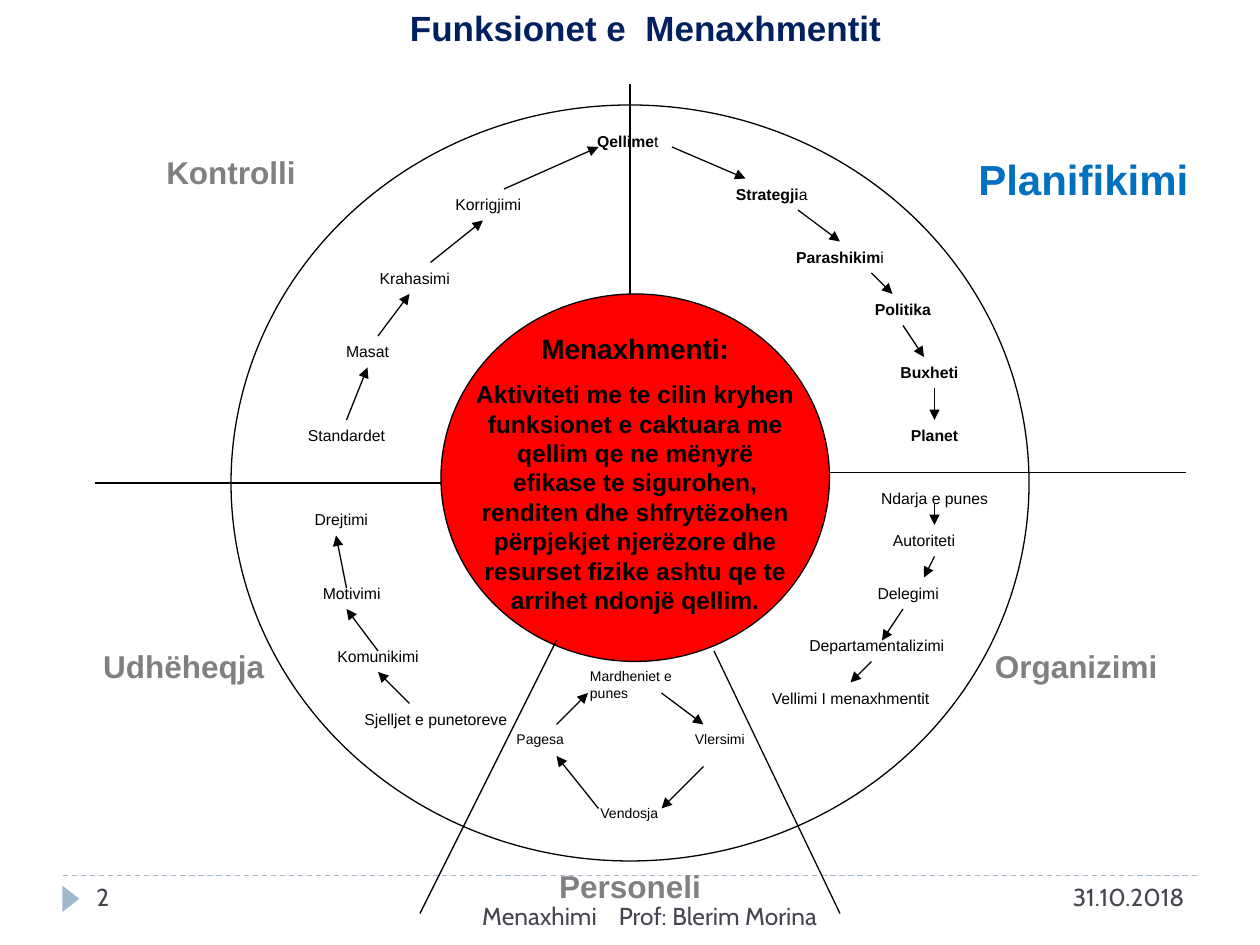
from dataclasses import dataclass

from lxml import etree
from pptx import Presentation
from pptx import util as u
from pptx.dml.color import RGBColor
from pptx.enum import dml, shapes, text
from pptx.oxml.ns import qn

LEFT, CENTER, RIGHT = text.PP_ALIGN.LEFT, text.PP_ALIGN.CENTER, text.PP_ALIGN.RIGHT


@dataclass(frozen=True)
class Style:
    size: float
    color: str = "000000"
    bold: bool = False
    align: int = CENTER
    height: float = 3
    font: str = "Arial"


class Theme:
    ink = "000000"
    paper = "FFFFFF"
    core = "FF0000"
    accent = "9FB8CD"
    stroke = 0.75
    title = Style(20, "002060", True, height=5.2)
    active = Style(24, "0070C0", True, LEFT, 6)
    sector = Style(18, "808080", True, height=4.8)
    step = Style(9)
    key_step = Style(9, bold=True)
    staff = Style(8, align=LEFT, height=2.8)
    heading = Style(16, bold=True, height=35.8)
    definition = Style(14, bold=True)
    footer = Style(14, "464653", align=RIGHT, height=4.8, font="Cabin")
    number = Style(14, "464653", align=LEFT, height=4.8, font="Cabin")


CYCLE_LINES = [(60, 28, 60, 8), (79, 45, 113, 45), (42, 46, 9, 46),
               (53, 61, 40, 87), (68, 62, 80, 87)]

PLANNING = [("Qellime", "t ", 54, 12, 12), ("Strategji", "a", 65, 17, 17),
            ("Parashikim", "i", 70, 23, 20), ("Politika", "", 77, 28, 18),
            ("Buxheti", "", 81, 34, 15), ("Planet", "", 81, 40, 16)]

STEPS = [("Ndarja e punes", 81, 46, 16), ("Autoriteti", 80, 50, 16),
         ("Delegimi", 78, 55, 17), ("Departamentalizimi", 75, 60, 17),
         ("Vellimi I menaxhmentit", 70, 65, 22),
         ("Sjelljet e punetoreve", 31, 67, 21), ("Komunikimi", 26, 61, 20),
         ("Motivimi", 25, 55, 17), ("Drejtimi", 25, 48, 15),
         ("Standardet", 24, 40, 18), ("Masat", 27, 32, 16),
         ("Krahasimi", 32, 25, 15), ("Korrigjimi", 38, 18, 17)]

STAFFING = [("Mardheniet e punes", 55, 63, 14), ("Vlersimi", 65, 69, 11),
            ("Vendosja", 56, 76, 10), ("Pagesa", 48, 69, 8)]

SECTORS = [("Kontrolli", 9, 14, 26), ("Organizimi", 91, 61, 23),
           ("Udhëheqja", 3, 61, 29), ("Personeli", 45, 82, 30)]

ARROWS = [(63, 66, 67, 69), (67, 73, 63, 77), (57, 77, 53, 72), (53, 69, 56, 66),
          (64, 14, 71, 17), (76, 20, 80, 23), (83, 26, 85, 28), (86, 31, 88, 34),
          (89, 37, 89, 40), (89, 48, 89, 50), (89, 53, 88, 55), (86, 58, 84, 61),
          (83, 63, 81, 65), (39, 67, 36, 64), (36, 62, 33, 58), (33, 56, 32, 51),
          (33, 40, 35, 35), (36, 32, 39, 28), (41, 25, 46, 21), (48, 18, 57, 14)]

DEFINITION = ("Aktiviteti me te cilin kryhen funksionet e caktuara me qellim qe ne "
              "mënyrë efikase te sigurohen, renditen dhe shfrytëzohen përpjekjet "
              "njerëzore dhe resurset fizike ashtu qe te arrihet ndonjë qellim.")


def grid(*steps):
    return [u.Cm(step * 2.54 / 12) for step in steps]


def apply(target, values):
    for name, value in values.items():
        setattr(target, name, value)


def draw_line(slide, ends, color=Theme.ink, arrow=False, dash=None):
    connector = slide.shapes.add_connector(shapes.MSO_CONNECTOR.STRAIGHT, *grid(*ends))
    connector.line.color.rgb = RGBColor.from_string(color)
    apply(connector.line, {"width": u.Pt(Theme.stroke), "dash_style": dash})
    if arrow:
        etree.SubElement(connector.line._get_or_add_ln(), qn("a:tailEnd"), type="triangle")
    etree.SubElement(connector._element.spPr, qn("a:effectLst"))


def draw_shape(slide, preset, box, fill, outline=None):
    figure = slide.shapes.add_shape(preset, *grid(*box))
    figure.shadow.inherit = False
    figure.fill.solid()
    figure.fill.fore_color.rgb = RGBColor.from_string(fill)
    if outline:
        figure.line.color.rgb = RGBColor.from_string(outline)
        figure.line.width = u.Pt(Theme.stroke)
    else:
        figure.line.fill.background()
    return figure


def write_run(paragraph, words, style, bold):
    run = paragraph.add_run()
    run.text = words
    apply(run.font, {"size": u.Pt(style.size), "name": style.font, "bold": bold})
    run.font.color.rgb = RGBColor.from_string(style.color)


def write_label(slide, words, x, y, width, style, plain_ending=""):
    frame = slide.shapes.add_textbox(*grid(x, y, width, style.height)).text_frame
    apply(frame, {"word_wrap": True, "auto_size": text.MSO_AUTO_SIZE.SHAPE_TO_FIT_TEXT})
    paragraph = frame.paragraphs[0]
    paragraph.alignment = style.align
    write_run(paragraph, words, style, style.bold)
    if plain_ending:
        write_run(paragraph, plain_ending, style, False)
    return frame


def write_definition(slide):
    frame = write_label(slide, "Menaxhmenti:", 44, 31, 33, Theme.heading)
    body = frame.add_paragraph()
    apply(body, {"alignment": CENTER, "space_before": u.Pt(8)})
    write_run(body, DEFINITION, Theme.definition, True)


def draw_footer_marks(slide):
    draw_line(slide, (6, 83.4, 114, 83.4), Theme.accent, dash=dml.MSO_LINE.DASH)
    marker = draw_shape(slide, shapes.MSO_SHAPE.ISOSCELES_TRIANGLE,
                        (5.5, 84.8, 2.5, 1.6), Theme.accent)
    marker.rotation = 90


def write_footer(slide):
    write_label(slide, "31.10.2018", 84, 83.4, 30, Theme.footer)
    write_label(slide, "Menaxhimi    Prof: Blerim Morina", 33, 85.2, 46, Theme.footer)
    write_label(slide, "2", 8, 83.4, 26, Theme.number)


def main():
    deck = Presentation()
    apply(deck, {"slide_width": u.Cm(25.4), "slide_height": u.Cm(19.05)})
    slide = deck.slides.add_slide(deck.slide_layouts[6])

    draw_footer_marks(slide)
    draw_shape(slide, shapes.MSO_SHAPE.OVAL, (22, 10, 76, 72), Theme.paper, Theme.ink)
    draw_shape(slide, shapes.MSO_SHAPE.OVAL, (42, 28, 37, 35), Theme.core, Theme.ink)
    for ends in CYCLE_LINES:
        draw_line(slide, ends)
    for words, ending, *place in PLANNING:
        write_label(slide, words, *place, Theme.key_step, ending)
    for labels, style in ((STAFFING, Theme.staff), (STEPS, Theme.step)):
        for label in labels:
            write_label(slide, *label, style)
    for ends in ARROWS:
        draw_line(slide, ends, arrow=True)
    write_definition(slide)
    write_label(slide, "Planifikimi", 92, 14, 23, Theme.active)
    for sector in SECTORS:
        write_label(slide, *sector, Theme.sector)
    write_label(slide, "Funksionet e  Menaxhmentit", 16, 0, 91, Theme.title)
    write_footer(slide)
    deck.save("out.pptx")


if __name__ == "__main__":
    main()
